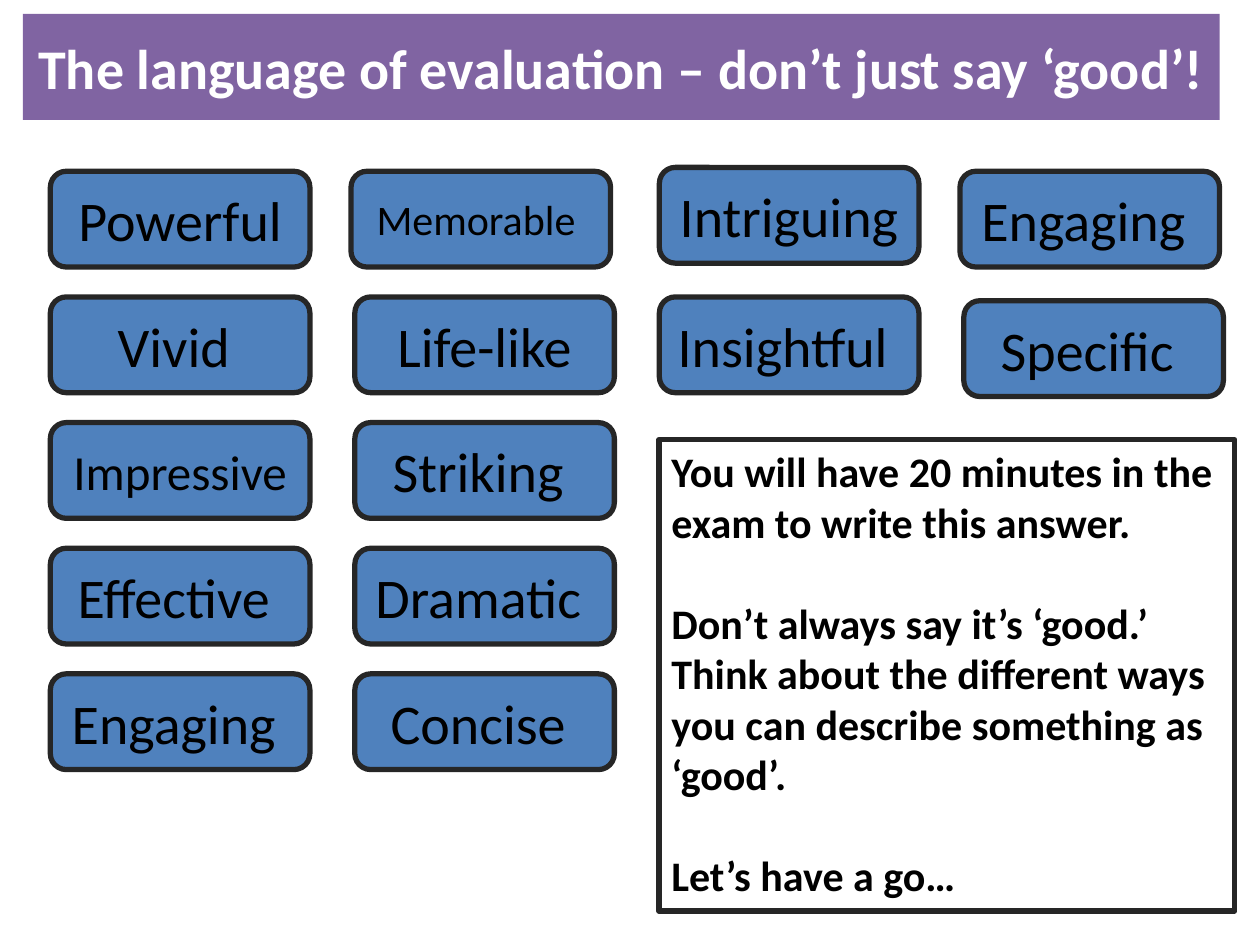
from dataclasses import dataclass

from pptx import Presentation
from pptx.dml.color import RGBColor as RGB
from pptx.enum.shapes import MSO_SHAPE as Preset
from pptx.enum.text import MSO_ANCHOR as Anchor, MSO_AUTO_SIZE as AutoSize, PP_ALIGN as Align
from pptx.util import Pt


@dataclass(frozen=True)
class Theme:
    font: str = "Calibri"
    banner: RGB = RGB(0x80, 0x64, 0xA2)
    card: RGB = RGB(0x4F, 0x81, 0xBD)
    outline: RGB = RGB(0x26, 0x26, 0x26)
    dark: RGB = RGB(0, 0, 0)
    light: RGB = RGB(255, 255, 255)
    large: int = 32
    medium: int = 28
    small: int = 24
    border: int = 3


THEME = Theme()
LEFT, TOP = 28.8, 97.9
COLUMN_STEP, ROW_STEP = 174, 71.8
CARD_WIDTH, CARD_HEIGHT = 148.3, 54.7
NUDGE = 2.2

WORD_COLUMNS = [
    ["Powerful", "Vivid ", "Impressive", "Effective ", "Engaging "],
    ["Memorable ", "Life-like", "Striking ", "Dramatic ", "Concise "],
    ["Intriguing ", "Insightful "],
    ["Engaging ", "Specific "],
]
WORD_SIZES = {"Memorable ": THEME.small, "Impressive": THEME.medium}
NUDGES = {(1, 0): (-NUDGE, 0), (2, 0): (0, -NUDGE), (3, 0): (-NUDGE, 0), (3, 1): (0, NUDGE)}
ADVICE = [
    "You will have 20 minutes in the exam to write this answer.",
    "Don’t always say it’s ‘good.’ Think about the different ways you can describe something as ‘good’.",
    "Let’s have a go…",
]


def write(paragraph, text, size, color, bold=False, align=Align.CENTER):
    paragraph.alignment = align
    run = paragraph.add_run()
    run.text = text
    run.font.name = THEME.font
    run.font.size = Pt(size)
    run.font.bold = bold
    run.font.color.rgb = color


def outline(shape):
    shape.line.color.rgb = THEME.outline
    shape.line.width = Pt(THEME.border)


def add_banner(slide, text):
    banner = slide.shapes.title
    banner.left, banner.top, banner.width, banner.height = Pt(13), Pt(8), Pt(684), Pt(60.5)
    banner.fill.solid()
    banner.fill.fore_color.rgb = THEME.banner
    frame = banner.text_frame
    frame.auto_size = AutoSize.NONE
    frame.vertical_anchor = Anchor.MIDDLE
    write(frame.paragraphs[0], text, THEME.large, THEME.light, bold=True)


def add_word_card(slide, word, left, top):
    card = slide.shapes.add_shape(
        Preset.ROUNDED_RECTANGLE, Pt(left), Pt(top), Pt(CARD_WIDTH), Pt(CARD_HEIGHT))
    card.shadow.inherit = False
    card.fill.solid()
    card.fill.fore_color.rgb = THEME.card
    outline(card)
    frame = card.text_frame
    frame.vertical_anchor = Anchor.MIDDLE
    write(frame.paragraphs[0], word, WORD_SIZES.get(word, THEME.large), THEME.dark)


def add_advice(slide, sentences):
    advice = slide.shapes.add_textbox(Pt(376.6), Pt(251.3), Pt(329), Pt(269.3))
    outline(advice)
    frame = advice.text_frame
    frame.word_wrap = True
    frame.auto_size = AutoSize.SHAPE_TO_FIT_TEXT
    for index, sentence in enumerate(sentences):
        paragraph = frame.add_paragraph() if index else frame.paragraphs[0]
        paragraph.space_before = Pt(29 if index else 0)
        write(paragraph, sentence, THEME.small, THEME.dark, bold=True, align=Align.LEFT)


def main():
    deck = Presentation()
    deck.slide_width, deck.slide_height = Pt(720), Pt(540)
    slide = deck.slides.add_slide(deck.slide_layouts[5])
    add_banner(slide, "The language of evaluation – don’t just say ‘good’!")
    for column, words in enumerate(WORD_COLUMNS):
        for row, word in enumerate(words):
            shift_x, shift_y = NUDGES.get((column, row), (0, 0))
            add_word_card(slide, word, LEFT + column * COLUMN_STEP + shift_x,
                          TOP + row * ROW_STEP + shift_y)
    add_advice(slide, ADVICE)
    deck.save("out.pptx")


if __name__ == "__main__":
    main()
